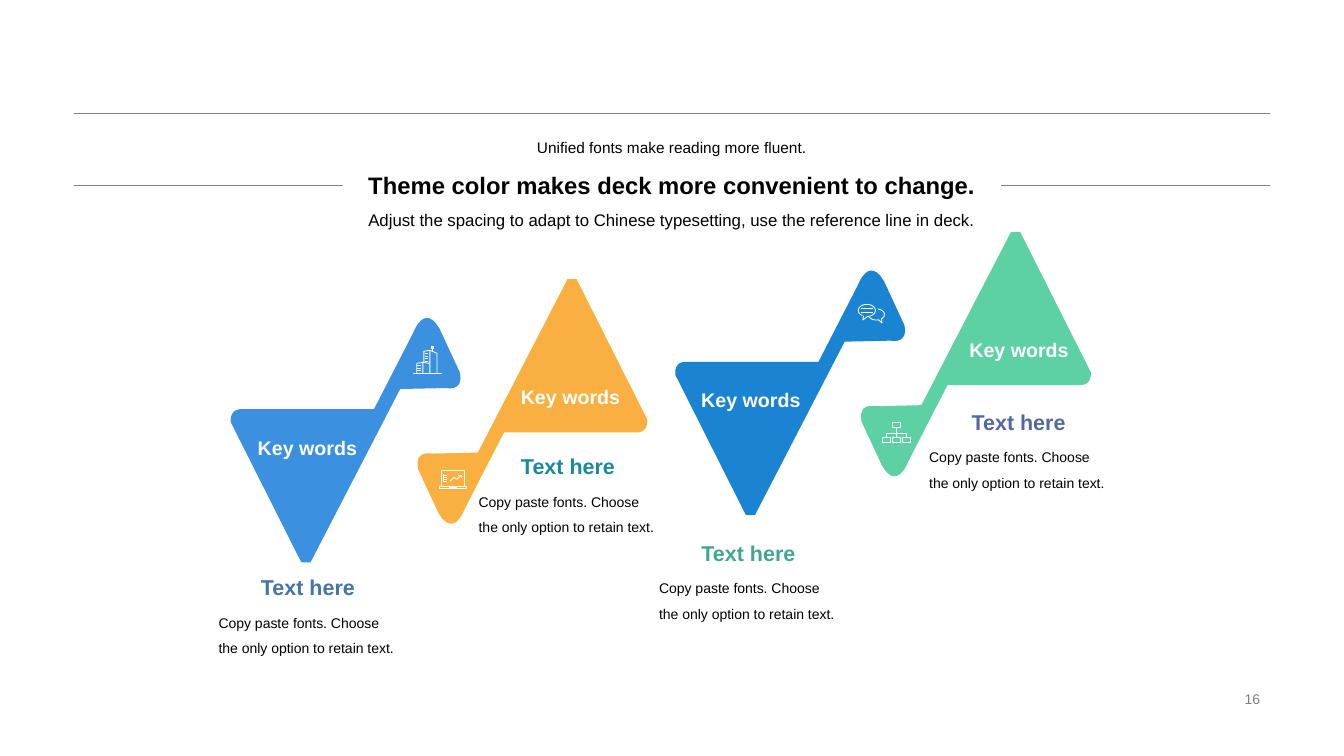
import math
import lxml.etree
import pptx
import pptx.dml.color
import pptx.enum.shapes
import pptx.enum.text
import pptx.oxml.ns
import pptx.util

# Grid of square cells, ten to the inch
CELL = 91440
COLS, ROWS = 133.33, 75
FINE = 100
FONT = "Arial"
WHITE, BLACK, GREY = "FFFFFF", "000000", "808080"
ALIGN = pptx.enum.text.PP_ALIGN
ANCHOR = pptx.enum.text.MSO_ANCHOR
BODY = "Copy paste fonts. Choose the only option to retain text."


def paint(hue):
    return pptx.dml.color.RGBColor.from_string(hue)


def span(*cells):
    return [pptx.util.Emu(round(n * CELL)) for n in cells]


# Text
def write(para, text, size, hue, bold=False, align=ALIGN.LEFT, lead=None):
    para.alignment = align
    if lead:
        para.line_spacing = lead
    run = para.add_run()
    run.text = text
    font = run.font
    font.name, font.size, font.bold = FONT, pptx.util.Pt(size), bold
    font.color.rgb = paint(hue)


def label(slide, box, *style, wrap=False, anchor=ANCHOR.TOP, inset=True, **more):
    frame = slide.shapes.add_textbox(*span(*box)).text_frame
    frame.word_wrap, frame.vertical_anchor = wrap, anchor
    if not inset:
        frame.margin_left = frame.margin_right = 0
    write(frame.paragraphs[0], *style, **more)


# Lines and outlines
def rule(slide, left, right, y):
    line = slide.shapes.add_connector(
        pptx.enum.shapes.MSO_CONNECTOR.STRAIGHT, *span(left, y, right, y))
    line.line.color.rgb = paint(GREY)
    line.line.width = pptx.util.Pt(0.25)
    lxml.etree.SubElement(line._element.spPr, pptx.oxml.ns.qn("a:effectLst"))


def trace(slide, left, top, paths, close=False):
    pen = None
    for path in paths:
        spots = [((left + x) * FINE, (top + y) * FINE) for x, y in path]
        if pen is None:
            pen = slide.shapes.build_freeform(*spots[0], scale=CELL / FINE)
        else:
            pen.move_to(*spots[0])
        pen.add_line_segments(spots[1:], close=close)
    shape = pen.convert_to_shape()
    shape.shadow.inherit = False
    return shape


def bend(start, pull, end, steps=12):
    """Cubic curve whose first handle rests on its start."""
    spots = []
    for i in range(steps + 1):
        t = i / steps
        a, b, c = (1 - t) ** 3 + 3 * t * (1 - t) ** 2, 3 * t * t * (1 - t), t ** 3
        spots.append(tuple(a * p + b * q + c * r
                           for p, q, r in zip(start, pull, end)))
    return spots


def arc(x, y, wide, high, first, last, steps=24):
    turns = [math.radians(first + (last - first) * i / steps)
             for i in range(steps + 1)]
    return [(x + wide * math.cos(t), y + high * math.sin(t)) for t in turns]


def oblong(x, y, wide, high):
    return [(x, y), (x + wide, y), (x + wide, y + high), (x, y + high), (x, y)]


def bars(left, right, rows):
    return [[(left, y), (right, y)] for y in rows]


# Icons, drawn in white strokes
TOWERS = [
    [(0, 2.75), (2.8, 2.75)],
    [(0.35, 2.75), (0.35, 1.75), (0.95, 1.65), (0.95, 2.75)],
    [(1.05, 1.65), (1.05, 0.55), (1.65, 0.45), (1.65, 2.75)],
    [(0.95, 1.65), (1.65, 1.75)],
    [(1.65, 0.45), (2.35, 0.75), (2.35, 2.75)],
    [(1.9, 0.5), (1.9, 0.1)], oblong(1.82, 0.08, 0.15, 0.15),
    *bars(1.2, 1.5, (0.75, 1.05, 1.25, 1.55)),
    *bars(0.4, 0.8, (1.95, 2.25, 2.45)),
]
LAPTOP = [
    oblong(0.25, 0.05, 2.3, 1.6), oblong(0.05, 1.65, 2.7, 0.2),
    [(1.05, 1.65), (1.05, 1.75), (1.75, 1.75), (1.75, 1.65)],
    [(1.15, 1.15), (1.55, 0.75), (1.8, 0.95), (2.25, 0.55)],
    [(1.95, 0.55), (2.25, 0.55), (2.25, 0.85)],
    [(0.45, 0.45), (0.45, 1.25)],
    *bars(0.6, 0.85, (0.55, 0.75, 0.95, 1.15)),
]
CHAT = [
    arc(0.9, 0.7, 0.85, 0.6, 120, 445) + [(0.5, 1.65), (0.57, 1.25)],
    arc(1.85, 1.1, 0.8, 0.55, -80, 50) + [(2.4, 1.95)]
    + arc(1.85, 1.1, 0.8, 0.55, 75, 150),
    *bars(0.35, 1.55, (0.55, 0.85)),
]
TREE = [
    oblong(1.05, 0.05, 0.8, 0.5),
    *[oblong(x, 1.45, 0.8, 0.5) for x in (0.05, 1.05, 2.05)],
    [(1.45, 0.55), (1.45, 1.45)],
    [(0.45, 1.45), (0.45, 1.15), (2.45, 1.15), (2.45, 1.45)],
]

# Ribbon of a large and a small triangle
WIDE, HIGH = 23.4, 25.9
RIBBON = [
    (8.1, 25.8), (7.2, 25.8),
    *bend((0.2, 11.9), (0, 10.7), (1.1, 10.6)), (14.4, 10.6),
    *bend((18.3, 3), (19.4, 0), (20.9, 2.6)),
    *bend((22.9, 6.9), (23.5, 8.8), (21.5, 8.5)), (17, 8.6),
]


def ribbon(slide, left, top, flip, hue, icon, spot, word, note, tint):
    """Place one ribbon; spot, word and note are offsets from its corner."""
    path = [(WIDE - x, HIGH - y) for x, y in RIBBON] if flip else RIBBON
    band = trace(slide, left, top, [path], close=True)
    band.fill.solid()
    band.fill.fore_color.rgb = paint(hue)
    band.line.fill.background()

    mark = trace(slide, left + spot[0], top + spot[1], icon)
    mark.fill.background()
    mark.line.color.rgb = paint(WHITE)
    mark.line.width = pptx.util.Pt(0.6)

    label(slide, (left + word[0], top + word[1], 11.4, 4.7), "Key words", 14,
          WHITE, True, anchor=ANCHOR.MIDDLE, inset=False, align=ALIGN.CENTER)
    x, y = left + note[0], top + note[1]
    label(slide, (x, y + 3.1, 19.7, 6.2), BODY, 10, BLACK, wrap=True, lead=1.5)
    label(slide, (x, y, 19.7, 3.1), "Text here", 15.3, tint, True,
          align=ALIGN.CENTER)


def heading(slide, box):
    title = slide.shapes.title
    title.left, title.top, title.width, title.height = span(*box)
    title.fill.solid()
    title.fill.fore_color.rgb = paint(WHITE)
    frame = title.text_frame
    frame.word_wrap, frame.vertical_anchor = True, ANCHOR.TOP
    frame.auto_size = pptx.enum.text.MSO_AUTO_SIZE.NONE
    lines = [
        ("Unified fonts make reading more fluent.", 11, False),
        ("Theme color makes deck more convenient to change.", 17, True),
        ("Adjust the spacing to adapt to Chinese typesetting, "
         "use the reference line in deck.", 12, False),
    ]
    for i, (text, size, bold) in enumerate(lines):
        para = frame.add_paragraph() if i else frame.paragraphs[0]
        write(para, text, size, BLACK, bold, ALIGN.CENTER, 1.5)
    # Bring the heading in front of the rule
    slide.shapes._spTree.append(title._element)


def main():
    deck = pptx.Presentation()
    deck.slide_width, deck.slide_height = span(COLS, ROWS)
    slide = deck.slides.add_slide(deck.slide_layouts[5])

    # Frame
    rule(slide, 7.3, 126, 11.2)
    label(slide, (94.2, 68.2, 31.8, 2.3), "16", 10, GREY, wrap=True,
          anchor=ANCHOR.MIDDLE, align=ALIGN.RIGHT)

    # Ribbons
    for part in [
        (22.7, 30, False, "3B91DF", TOWERS, (18.3, 4.3), (2.1, 12.1), (-2, 26.5), "4276AA"),
        (41, 27.6, True, "FAB040", LAPTOP, (2.5, 19), (9.9, 9.4), (5.5, 16.9), "178AA1"),
        (66.8, 25.3, False, "1A84D3", CHAT, (18.3, 4.8), (2, 12), (-2.4, 27.8), "40A693"),
        (85, 22.9, True, "5DD1A4", TREE, (2.5, 19), (10.4, 9.4), (6.2, 17.2), "5268A5"),
    ]:
        ribbon(slide, *part)

    # Heading over its rule
    rule(slide, 7.3, 126, 18.4)
    heading(slide, (34, 12.3, 65.3, 12.5))
    deck.save("out.pptx")


if __name__ == "__main__":
    main()
